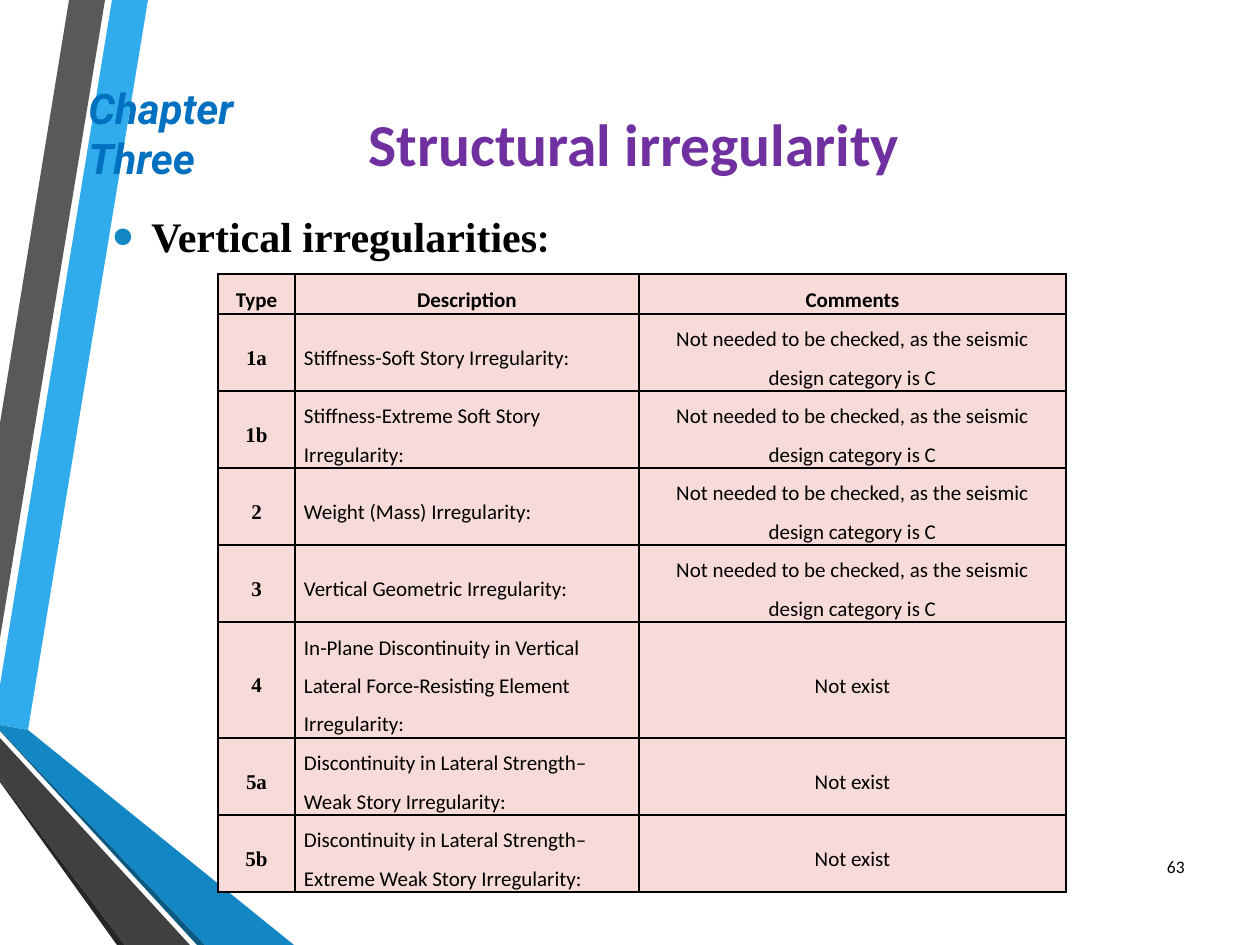
from dataclasses import dataclass

from lxml import etree
from pptx import Presentation
from pptx import util as u
from pptx.dml.color import RGBColor
from pptx.enum import text
from pptx.oxml import ns

PX = 914400 / 126
CENTER, LEFT, RIGHT = text.PP_ALIGN.CENTER, text.PP_ALIGN.LEFT, text.PP_ALIGN.RIGHT
TOP, MIDDLE = text.MSO_ANCHOR.TOP, text.MSO_ANCHOR.MIDDLE
SANS, SERIF, DISPLAY = "Calibri", "Times New Roman", "Roboto"

COLORS = {
    "sky": "30ACEC", "gray": "595959", "black_gray": "262626", "navy": "0C5A82",
    "blue": "1287C3", "dark_gray": "404040", "purple": "7030A0",
    "chapter": "0070C0", "ink": "000000", "cell": "F7DBD8",
}


@dataclass(frozen=True)
class Band:
    color: str
    points: tuple[tuple[int, int], ...]


@dataclass(frozen=True)
class Style:
    size: int
    font: str = SANS
    color: str = "ink"
    bold: bool = False
    italic: bool = False


@dataclass(frozen=True)
class Irregularity:
    type: str
    description: str
    comment: str
    height: int = 77


BANDS = (
    Band("sky", ((0, 685), (0, 725), (28, 730), (148, 0), (112, 0))),
    Band("gray", ((105, 0), (69, 0), (0, 423), (0, 638))),
    Band("black_gray", ((0, 780), (0, 782), (117, 945), (125, 945))),
    Band("navy", ((0, 730), (0, 731), (197, 945), (205, 945))),
    Band("blue", ((0, 730), (205, 945), (294, 945), (28, 730), (0, 725))),
    Band("dark_gray", ((0, 780), (125, 945), (190, 945), (0, 738))),
)

NOT_NEEDED = "Not needed to be checked, as the seismic design category is C"
NOT_EXIST = "Not exist"
ROWS = (
    Irregularity("1a", "Stiffness-Soft Story Irregularity:", NOT_NEEDED),
    Irregularity("1b", "Stiffness-Extreme Soft Story Irregularity:", NOT_NEEDED),
    Irregularity("2", "Weight (Mass) Irregularity:", NOT_NEEDED),
    Irregularity("3", "Vertical Geometric Irregularity:", NOT_NEEDED),
    Irregularity("4", "In-Plane Discontinuity in Vertical Lateral "
                 "Force-Resisting Element Irregularity:", NOT_EXIST, 116),
    Irregularity("5a", "Discontinuity in Lateral Strength–Weak Story Irregularity:",
                 NOT_EXIST),
    Irregularity("5b", "Discontinuity in Lateral Strength–Extreme Weak Story "
                 "Irregularity:", NOT_EXIST),
)
COLUMNS = (77, 344, 427)
HEADER_HEIGHT = 40


def emu(px: int) -> u.Emu:
    return u.Emu(round(px * PX))


def rgb(name: str) -> RGBColor:
    return RGBColor.from_string(COLORS[name])


def add_band(s, band: Band) -> None:
    builder = s.shapes.build_freeform(*band.points[0], scale=PX)
    builder.add_line_segments(band.points[1:], close=True)
    sp = builder.convert_to_shape()
    sp.shadow.inherit = False
    sp.fill.solid()
    sp.fill.fore_color.rgb = rgb(band.color)
    sp.line.fill.background()


def add_run(p, words: str, style: Style) -> None:
    r = p.add_run()
    r.text = words
    f = r.font
    f.size, f.name = u.Pt(style.size), style.font
    f.bold, f.italic = style.bold, style.italic
    f.color.rgb = rgb(style.color)


def add_text(s, box: tuple[int, int, int, int], runs: list[tuple[str, Style]],
             align=LEFT, anchor=MIDDLE):
    sp = s.shapes.add_textbox(*map(emu, box))
    tf = sp.text_frame
    tf.word_wrap, tf.vertical_anchor = True, anchor
    p = tf.paragraphs[0]
    p.alignment = align
    for words, style in runs:
        add_run(p, words, style)
    return tf


def add_bullet(p, color: str, percent: int, indent: int) -> None:
    pPr = p._p.get_or_add_pPr()
    pPr.set("marL", str(emu(indent)))
    pPr.set("indent", str(-emu(indent)))
    clr = etree.SubElement(pPr, ns.qn("a:buClr"))
    etree.SubElement(clr, ns.qn("a:srgbClr"), val=COLORS[color])
    etree.SubElement(pPr, ns.qn("a:buSzPct"), val=str(percent * 1000))
    etree.SubElement(pPr, ns.qn("a:buFont"), typeface="Arial")
    etree.SubElement(pPr, ns.qn("a:buChar"), char="•")


def add_borders(cell) -> None:
    """Rule all four sides; the lines must precede the fill in tcPr."""
    tcPr = cell._tc.get_or_add_tcPr()
    for i, side in enumerate(("lnL", "lnR", "lnT", "lnB")):
        ln = etree.Element(ns.qn(f"a:{side}"), w=str(u.Pt(1)))
        fill = etree.SubElement(ln, ns.qn("a:solidFill"))
        etree.SubElement(fill, ns.qn("a:srgbClr"), val=COLORS["ink"])
        tcPr.insert(i, ln)


def fill_cell(cell, words: str, style: Style, align, inset: int) -> None:
    cell.fill.solid()
    cell.fill.fore_color.rgb = rgb("cell")
    cell.vertical_anchor = MIDDLE
    cell.margin_left = cell.margin_right = emu(inset)
    cell.margin_top = cell.margin_bottom = 0
    p = cell.text_frame.paragraphs[0]
    p.alignment, p.line_spacing, p.space_after = align, 1.5, u.Pt(6)
    add_run(p, words, style)
    add_borders(cell)


def add_irregularity_table(s, left: int, top: int) -> None:
    heights = [HEADER_HEIGHT] + [row.height for row in ROWS]
    table = s.shapes.add_table(len(heights), len(COLUMNS), emu(left), emu(top),
                               emu(sum(COLUMNS)), emu(sum(heights))).table
    for column, width in zip(table.columns, COLUMNS):
        column.width = emu(width)
    for row, height in zip(table.rows, heights):
        row.height = emu(height)

    header = Style(12, bold=True)
    for c, words in enumerate(("Type", "Description", "Comments")):
        fill_cell(table.cell(0, c), words, header, CENTER, 8)
    type_style, body = Style(12, SERIF, bold=True), Style(12)
    for i, row in enumerate(ROWS, start=1):
        fill_cell(table.cell(i, 0), row.type, type_style, CENTER, 8)
        fill_cell(table.cell(i, 1), row.description, body, LEFT, 9)
        fill_cell(table.cell(i, 2), row.comment, body, CENTER, 9)


def main() -> None:
    prs = Presentation()
    prs.slide_width, prs.slide_height = emu(1260), emu(945)
    s = prs.slides.add_slide(prs.slide_layouts[6])

    for band in BANDS:
        add_band(s, band)

    title = Style(34, color="purple", bold=True)
    add_text(s, (60, 87, 1148, 111), [("Structural irregularity", title)], CENTER)

    heading = [("Vertical irregularities", Style(24, SERIF, bold=True)),
               (":", Style(24, bold=True))]
    tf = add_text(s, (100, 139, 1139, 669), heading, anchor=TOP)
    tf.margin_top = emu(72)
    add_bullet(tf.paragraphs[0], "blue", 145, 39)

    add_text(s, (1138, 842, 59, 50), [("63", Style(10))], RIGHT)
    add_irregularity_table(s, 218, 274)

    chapter = Style(24, DISPLAY, "chapter", bold=True, italic=True)
    add_text(s, (76, 76, 223, 63), [("Chapter Three", chapter)], anchor=TOP)

    prs.save("out.pptx")


if __name__ == "__main__":
    main()
